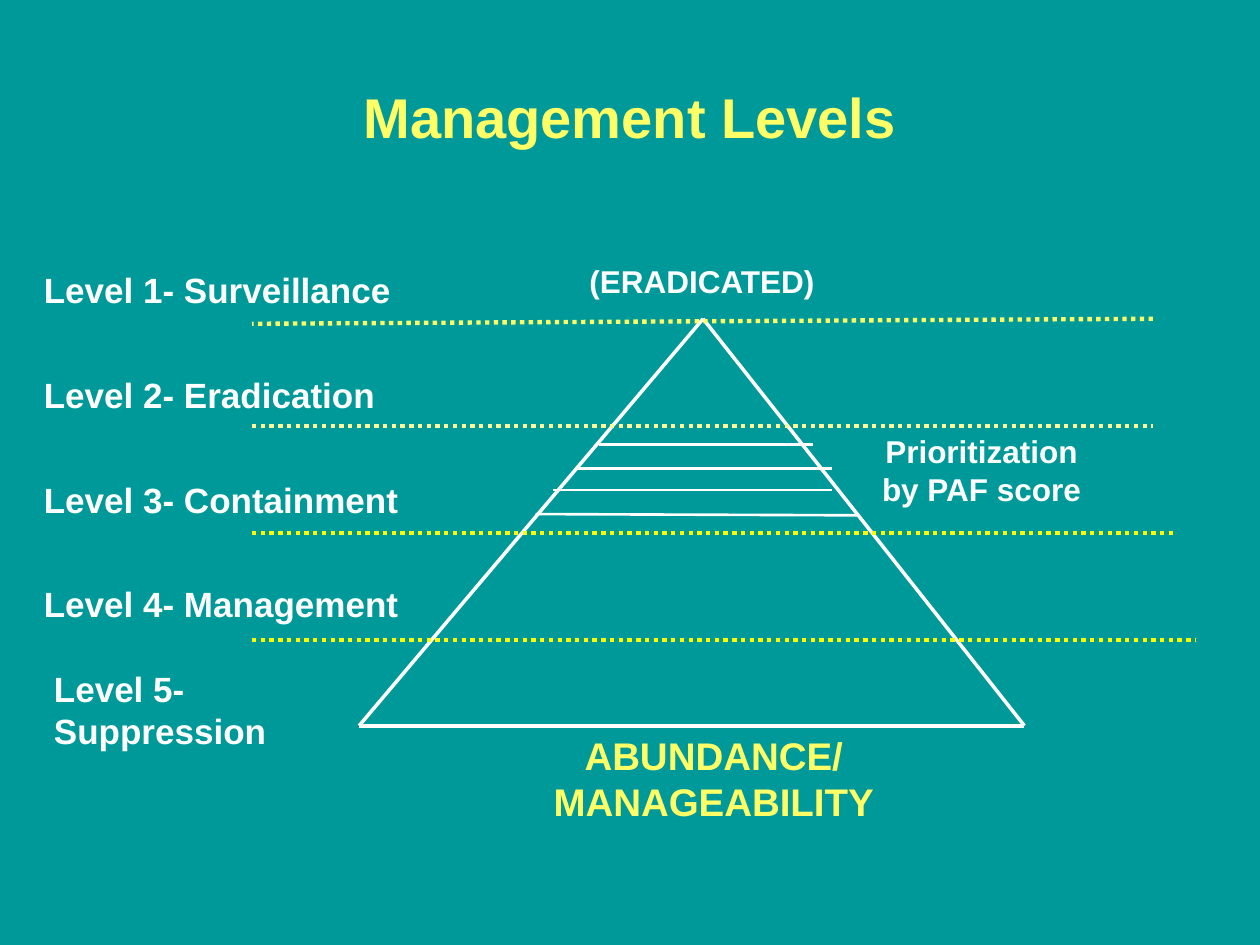
from pptx import Presentation
from pptx.dml.color import RGBColor
from pptx.enum.dml import MSO_LINE
from pptx.enum.shapes import MSO_CONNECTOR
from pptx.enum.text import MSO_ANCHOR, PP_ALIGN
from pptx.oxml.ns import qn
from pptx.util import Inches, Pt
from lxml.etree import SubElement

WHITE = "FFFFFF"
YELLOW = "FFFF66"


def colour(value):
    return RGBColor.from_string(value)


def write_text(shape, lines, size, hue, align):
    frame = shape.text_frame
    frame.word_wrap = True
    frame.text = "\n".join(lines)
    for para in frame.paragraphs:
        para.alignment = align
        para.font.name = "Arial"
        para.font.size = Pt(size)
        para.font.bold = True
        para.font.color.rgb = colour(hue)


def add_text(page, box, lines, size=20, hue=WHITE, align=PP_ALIGN.LEFT):
    shape = page.shapes.add_textbox(*map(Inches, box))
    write_text(shape, lines, size, hue, align)
    return shape


def add_line(page, start, end, hue=WHITE, width=2, dash=None):
    line = page.shapes.add_connector(
        MSO_CONNECTOR.STRAIGHT, *map(Inches, (*start, *end)))
    line.line.color.rgb = colour(hue)
    line.line.width = Pt(width)
    if dash:
        line.line.dash_style = dash
    SubElement(line._element.spPr, qn("a:effectLst"))


def add_title(page, box):
    title = page.shapes.title
    title.left, title.top, title.width, title.height = map(Inches, box)
    title.text_frame.vertical_anchor = MSO_ANCHOR.MIDDLE
    write_text(title, ["Management Levels"], 32, YELLOW, PP_ALIGN.CENTER)


def add_pyramid(page, box):
    """Triangle outline with the priority rungs across its middle."""
    left, top, width, height = box
    apex = (left + 2.73, top)
    base_left = (left, top + height)
    base_right = (left + width, top + height)
    for start, end in ((base_left, apex), (base_right, apex), (base_left, base_right)):
        add_line(page, start, end)

    rungs = [(1.9, 3.6, 1, 1), (1.54, 3.75, 1.36, 1.36),
             (1.71, 3.75, 1.19, 1.19), (1.4, 3.95, 1.55, 1.56)]
    rungs[1], rungs[2] = rungs[2], rungs[1]
    for start_x, end_x, start_y, end_y in rungs:
        add_line(page, (left + start_x, top + start_y),
                 (left + end_x, top + end_y), width=1.5)


def add_level_dividers(page, box):
    left, top, width, height = box
    step = height / 3
    add_line(page, (left + 7.15, top), (left, top + 0.04), YELLOW, 2.5, MSO_LINE.ROUND_DOT)
    for index, (length, hue) in enumerate(
            [(7.15, "FFFF99"), (7.32, "FFFF00"), (width, "FFFF00")], start=1):
        y = top + index * step
        add_line(page, (left, y), (left + length, y), hue, 2.5, MSO_LINE.ROUND_DOT)


def add_level_names(page, box):
    left, top, width, height = box
    names = ["Surveillance", "Eradication", "Containment", "Management"]
    for index, name in enumerate(names):
        add_text(page, (left, top + index * height / 4, width, 0.4),
                 [f"Level {index + 1}- {name}"])
    add_text(page, (left + 0.08, top + 3.17, 2, 1), ["Level 5-", "Suppression"])


def add_captions(page):
    add_text(page, (4.58, 2.03, 2.17, 0.42), ["(ERADICATED)"], 18)
    add_text(page, (6.77, 3.38, 2.04, 0.68), ["Prioritization by PAF score"],
             18, align=PP_ALIGN.CENTER)
    add_text(page, (3.75, 5.76, 3.83, 0.85), ["ABUNDANCE/", "MANAGEABILITY"],
             22, YELLOW, PP_ALIGN.CENTER)


def main():
    deck = Presentation()
    deck.slide_width, deck.slide_height = Inches(10), Inches(7.5)
    page = deck.slides.add_slide(deck.slide_layouts[5])
    page.background.fill.solid()
    page.background.fill.fore_color.rgb = colour("009999")

    add_title(page, (0.5, 0.3, 9, 1.25))
    add_pyramid(page, (2.85, 2.53, 5.28, 3.23))
    add_level_dividers(page, (2, 2.53, 7.49, 2.55))
    add_level_names(page, (0.25, 2.08, 3.5, 3.33))
    add_captions(page)
    deck.save("out.pptx")


if __name__ == "__main__":
    main()
